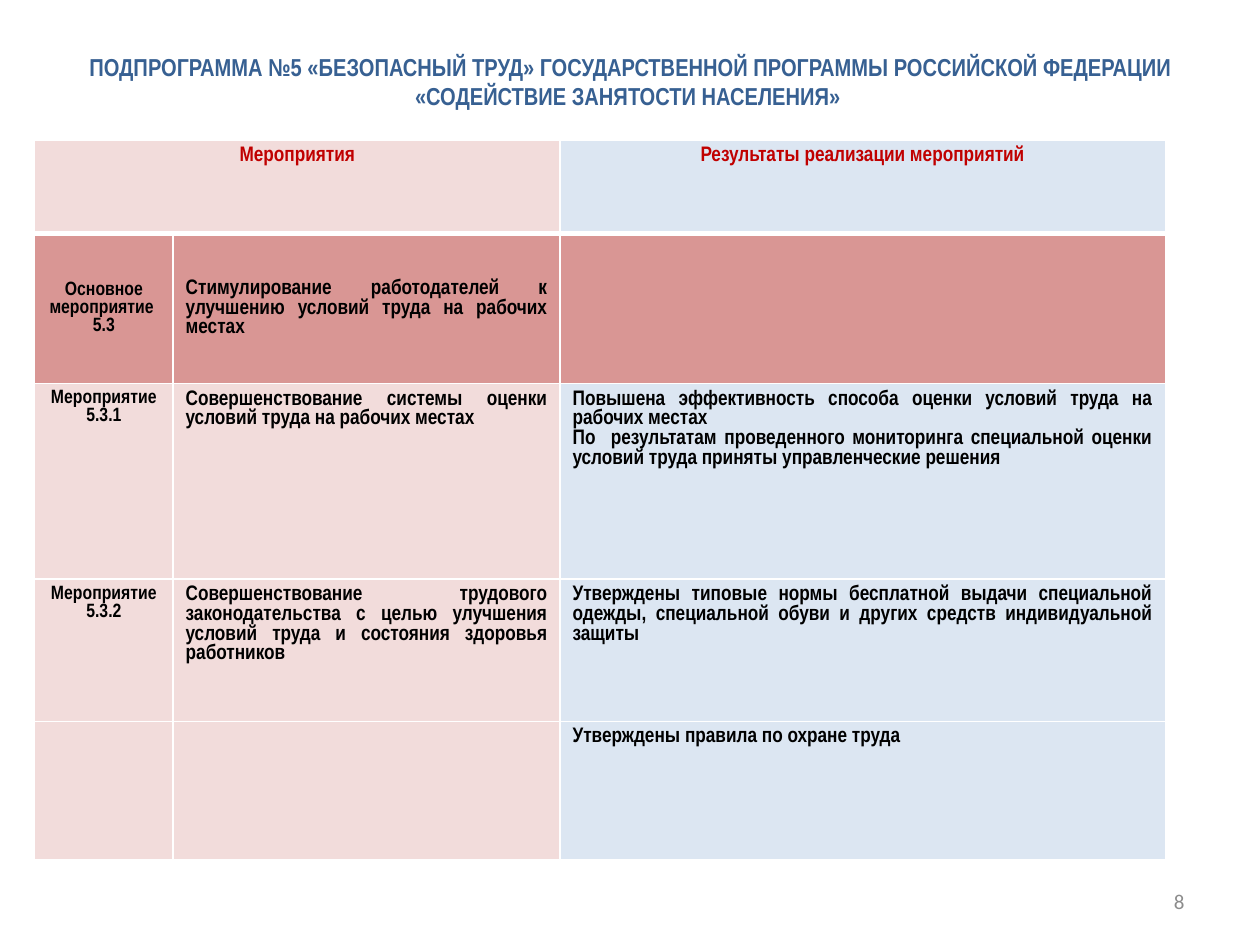
import pptx
import pptx.dml.color
import pptx.enum.text
import pptx.oxml
import pptx.oxml.ns
import pptx.util

Cm = pptx.util.Cm
ALIGN = pptx.enum.text.PP_ALIGN
ANCHOR = pptx.enum.text.MSO_ANCHOR

TITLE = ("ПОДПРОГРАММА №5 «БЕЗОПАСНЫЙ ТРУД» ГОСУДАРСТВЕННОЙ ПРОГРАММЫ "
         "РОССИЙСКОЙ ФЕДЕРАЦИИ «СОДЕЙСТВИЕ ЗАНЯТОСТИ НАСЕЛЕНИЯ» ")
PAGE_NUMBER = "8"

# Each cell is a list of paragraphs
HEADER = [["Мероприятия"], [], ["Результаты реализации мероприятий"]]
MAIN_MEASURE = [
    ["Основное мероприятие ", "5.3"],
    ["Стимулирование работодателей к улучшению условий труда на рабочих местах"],
    [],
]
MEASURES = [
    [["Мероприятие 5.3.1"],
     ["Совершенствование системы оценки условий труда на рабочих местах"],
     ["Повышена эффективность способа оценки условий труда на рабочих местах",
      "По  результатам проведенного мониторинга специальной оценки условий труда "
      "приняты управленческие решения"]],
    [["Мероприятие 5.3.2"],
     ["Совершенствование трудового законодательства с целью улучшения условий труда "
      "и состояния здоровья работников"],
     ["Утверждены типовые нормы бесплатной выдачи специальной одежды, специальной "
      "обуви и других средств индивидуальной защиты"]],
    [[], [], ["Утверждены правила по охране труда"]],
]
ROWS = [HEADER, MAIN_MEASURE, *MEASURES]

COLUMN_WIDTHS = [2.79, 7.8, 12.2]
ROW_HEIGHTS = [1.89, 3.02, 3.94, 2.87, 2.79]

PINK, ROSE, PALE_BLUE, WHITE = "F2DCDB", "D99694", "DCE6F2", "FFFFFF"
COLUMN_FILLS = [PINK, PINK, PALE_BLUE]

NARROW = {"name": "Arial Narrow", "bold": True}
TITLE_FONT = {**NARROW, "size": 14, "color": "376092"}
NUMBER_FONT = {"name": "Calibri", "size": 12, "color": "8C8C8C"}
HEADER_FONT = {**NARROW, "size": 12, "color": "C00000"}
LABEL_FONT = {**NARROW, "size": 11, "color": "000000"}
BODY_FONT = {**LABEL_FONT, "size": 12}


def rgb(value):
    return pptx.dml.color.RGBColor.from_string(value)


def write(frame, paragraphs, font, align):
    for index, text in enumerate(paragraphs):
        para = frame.paragraphs[0] if index == 0 else frame.add_paragraph()
        para.alignment = align
        span = para.add_run()
        span.text = text
        for key, value in font.items():
            if key == "color":
                span.font.color.rgb = rgb(value)
            elif key == "size":
                span.font.size = pptx.util.Pt(value)
            else:
                setattr(span.font, key, value)


def add_text(page, place, text, font, align):
    frame = page.shapes.add_textbox(*(Cm(length) for length in place)).text_frame
    frame.word_wrap = True
    frame.vertical_anchor = ANCHOR.MIDDLE
    write(frame, [text], font, align)


def set_borders(cell, top, bottom):
    """Draw white borders; widths are in points."""
    properties = cell._tc.get_or_add_tcPr()
    for side, width in {"L": 1, "R": 1, "T": top, "B": bottom}.items():
        properties.append(pptx.oxml.parse_xml(
            f'<a:ln{side} {pptx.oxml.ns.nsdecls("a")} w="{pptx.util.Pt(width)}">'
            f'<a:solidFill><a:srgbClr val="{WHITE}"/></a:solidFill></a:ln{side}>'))


def add_measures_table(page):
    table = page.shapes.add_table(
        len(ROWS), len(COLUMN_WIDTHS), Cm(0.7), Cm(2.82),
        Cm(sum(COLUMN_WIDTHS)), Cm(sum(ROW_HEIGHTS))).table
    for column, width in zip(table.columns, COLUMN_WIDTHS):
        column.width = Cm(width)
    for row, height in zip(table.rows, ROW_HEIGHTS):
        row.height = Cm(height)
    table.cell(0, 0).merge(table.cell(0, 1))

    for r, row in enumerate(ROWS):
        for c, paragraphs in enumerate(row):
            cell = table.cell(r, c)
            set_borders(cell, top=3 if r == 1 else 1, bottom=3 if r == 0 else 1)
            cell.fill.solid()
            cell.fill.fore_color.rgb = rgb(ROSE if r == 1 else COLUMN_FILLS[c])
            cell.vertical_anchor = ANCHOR.MIDDLE if r == 1 else ANCHOR.TOP
            font = HEADER_FONT if r == 0 else LABEL_FONT if c == 0 else BODY_FONT
            align = ALIGN.CENTER if r == 0 or c == 0 else ALIGN.JUSTIFY
            write(cell.text_frame, paragraphs, font, align)


def main():
    deck = pptx.Presentation()
    deck.slide_width, deck.slide_height = Cm(25.4), Cm(19.05)
    page = deck.slides.add_slide(deck.slide_layouts[6])
    add_text(page, (18.2, 17.66, 5.93, 1.01), PAGE_NUMBER, NUMBER_FONT, ALIGN.RIGHT)
    add_text(page, (1.3, 0.91, 22.83, 1.46), TITLE, TITLE_FONT, ALIGN.CENTER)
    add_measures_table(page)
    deck.save("out.pptx")


if __name__ == "__main__":
    main()
